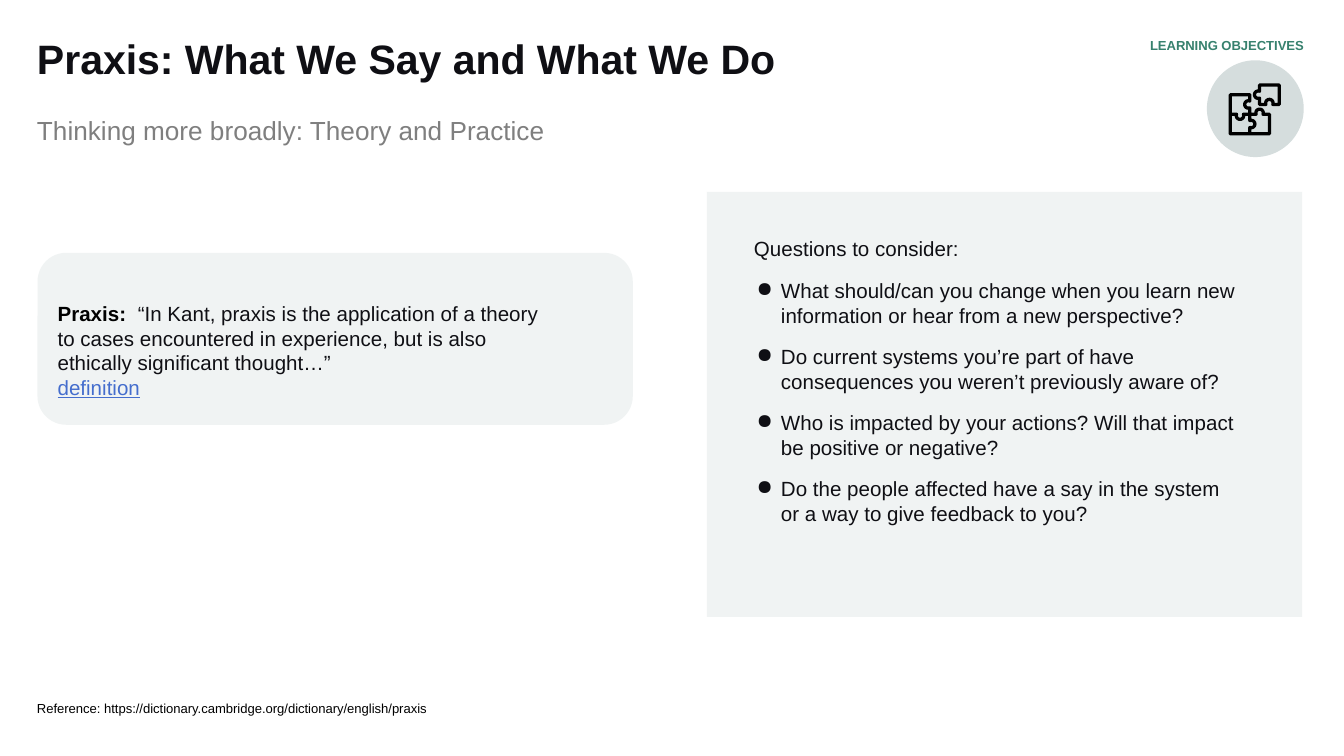
"""Build the slide on praxis, with its definition and questions to consider."""
from math import asin, cos, pi, sin

from lxml.etree import SubElement
from pptx import Presentation
from pptx.dml.color import RGBColor
from pptx.enum.shapes import MSO_SHAPE as Shape
from pptx.enum.text import MSO_ANCHOR as Anchor, PP_ALIGN as Align
from pptx.oxml.ns import qn
from pptx.util import Cm, Pt

COLORS = {
    "ink": "0F0F14", "black": "000000", "gray": "7F7F7F", "green": "37816E",
    "link": "446DCD", "panel": "F0F3F3", "badge": "D5DDDD",
}
FONT = "Arial"
INSET = 0.25

TITLE = "Praxis: What We Say and What We Do"
SUBTITLE = "Thinking more broadly: Theory and Practice"
LABEL = "LEARNING OBJECTIVES"
REFERENCE = "Reference: https://dictionary.cambridge.org/dictionary/english/praxis"
TERM = "Praxis: "
DEFINITION = (" “In Kant, praxis is the application of a theory to cases encountered "
              "in experience, but is also ethically significant thought…”")
LINK = "definition"
QUESTIONS_HEADING = "Questions to consider:"
QUESTIONS = [
    "What should/can you change when you learn new information or hear from a new perspective?",
    "Do current systems you’re part of have consequences you weren’t previously aware of?",
    "Who is impacted by your actions? Will that impact be positive or negative?",
    "Do the people affected have a say in the system or a way to give feedback to you?",
]

PANELS = [
    (Shape.ROUNDED_RECTANGLE, (0.71, 4.78, 11.25, 3.25), "panel"),
    (Shape.RECTANGLE, (13.36, 3.63, 11.25, 8.03), "panel"),
    (Shape.OVAL, (22.81, 1.14, 1.83, 1.83), "badge"),
]

PUZZLE_LEFT, PUZZLE_TOP, PUZZLE_CELL = 23.25, 1.79, 0.37
KNOB_RADIUS, KNOB_OFFSET, KNOB_STEPS = 0.19, 0.07, 16
NORTH, SOUTH, EAST, WEST = -1j, 1j, 1, -1
PUZZLE = [
    (0, [(1, None), (1 + 1j, WEST), (2 + 1j, NORTH), (2 + 2j, None), (2j, None), (0, None)]),
    (1j, [(1 + 1j, SOUTH)]),
    (1 + 1j, [(1 + 2j, EAST)]),
    (1.5 - 0.5j, [(2.5 - 0.5j, None), (2.5 + 0.5j, None), (1.5 + 0.5j, NORTH),
                  (1.5 - 0.5j, WEST)]),
]


def rgb(name):
    return RGBColor.from_string(COLORS[name])


def add_panel(page, kind, place, color):
    panel = page.shapes.add_shape(kind, *map(Cm, place))
    panel.shadow.inherit = False
    panel.fill.solid()
    panel.fill.fore_color.rgb = rgb(color)
    panel.line.fill.background()


def add_box(page, place, insets, anchor=Anchor.TOP):
    frame = page.shapes.add_textbox(*map(Cm, place)).text_frame
    frame.word_wrap = True
    frame.vertical_anchor = anchor
    (frame.margin_left, frame.margin_top,
     frame.margin_right, frame.margin_bottom) = map(Cm, insets)
    return frame


def style(font, size, color, bold=False):
    font.name, font.size, font.bold = FONT, Pt(size), bold
    font.color.rgb = rgb(color)


def add_line(page, text, place, insets, size, color, bold=False,
             spacing=None, align=Align.LEFT, anchor=Anchor.TOP):
    para = add_box(page, place, insets, anchor).paragraphs[0]
    para.text, para.alignment, para.line_spacing = text, align, spacing
    style(para.font, size, color, bold)


def add_bullet(para):
    props = para._p.get_or_add_pPr()
    props.set("marL", str(Cm(0.51)))
    props.set("indent", str(-Cm(0.46)))
    SubElement(SubElement(props, qn("a:buClr")), qn("a:srgbClr")).set("val", COLORS["ink"])
    SubElement(props, qn("a:buChar")).set("char", "●")


def add_questions(page):
    frame = add_box(page, (14.25, 4.22, 9.45, 6.5), (0, INSET, INSET, INSET))
    heading = frame.paragraphs[0]
    heading.text = QUESTIONS_HEADING
    style(heading.font, 11, "ink")
    for question in QUESTIONS:
        para = frame.add_paragraph()
        para.text = question
        para.space_before = Pt(9)
        add_bullet(para)
        style(para.font, 11, "ink")
    para.space_after = Pt(9)


def add_definition(page):
    frame = add_box(page, (1.09, 4.22, 9.45, 4.8), (0, INSET, INSET, INSET), Anchor.MIDDLE)
    para = frame.paragraphs[0]
    for text, color, bold in [(TERM, "black", True), (DEFINITION, "ink", False)]:
        span = para.add_run()
        span.text = text
        style(span.font, 11, color, bold)
    para = frame.add_paragraph()
    para.text = LINK
    style(para.font, 11, "link")
    para.font.underline = True


def knob_points(start, end, toward):
    along = (end - start) / abs(end - start)
    center = (start + end) / 2 + KNOB_OFFSET * toward
    dip = asin(KNOB_OFFSET / KNOB_RADIUS)
    angles = [pi + dip - (pi + 2 * dip) * step / KNOB_STEPS for step in range(KNOB_STEPS + 1)]
    return [center + KNOB_RADIUS * (along * cos(a) + toward * sin(a)) for a in angles]


def puzzle_place(point):
    point = complex(point)
    return (Cm(PUZZLE_LEFT + PUZZLE_CELL * point.real),
            Cm(PUZZLE_TOP + PUZZLE_CELL * point.imag))


def add_puzzle(page):
    builder = page.shapes.build_freeform(*puzzle_place(PUZZLE[0][0]))
    for index, (start, edges) in enumerate(PUZZLE):
        if index:
            builder.move_to(*puzzle_place(start))
        points, corner = [], start
        for end, toward in edges:
            if toward is not None:
                points += knob_points(corner, end, toward)
            points.append(end)
            corner = end
        builder.add_line_segments(map(puzzle_place, points), close=corner == start)
    puzzle = builder.convert_to_shape()
    puzzle.shadow.inherit = False
    puzzle.fill.background()
    puzzle.line.color.rgb = rgb("black")
    puzzle.line.width = Pt(1.75)
    SubElement(puzzle.line._get_or_add_ln(), qn("a:round"))


def main():
    deck = Presentation()
    deck.slide_width, deck.slide_height = Cm(25.4), Cm(14.29)
    page = deck.slides.add_slide(deck.slide_layouts[6])
    for panel in PANELS:
        add_panel(page, *panel)
    add_line(page, TITLE, (0.7, 0.74, 20.22, 3.12), (0, 0, INSET, INSET),
             22, "ink", bold=True, spacing=0.9)
    add_line(page, SUBTITLE, (0.7, 2.16, 18.01, 0.91), (0, 0, INSET, INSET), 14, "gray")
    add_line(page, LABEL, (19.23, 0.74, 5.41, 0.41), (0, 0, 0, INSET),
             7, "green", bold=True, spacing=0.9, align=Align.RIGHT)
    add_definition(page)
    add_questions(page)
    add_line(page, REFERENCE, (0.7, 12.45, 21.34, 1.09), (0, 0, INSET, 0),
             7, "black", anchor=Anchor.BOTTOM)
    add_puzzle(page)
    deck.save("out.pptx")


if __name__ == "__main__":
    main()
